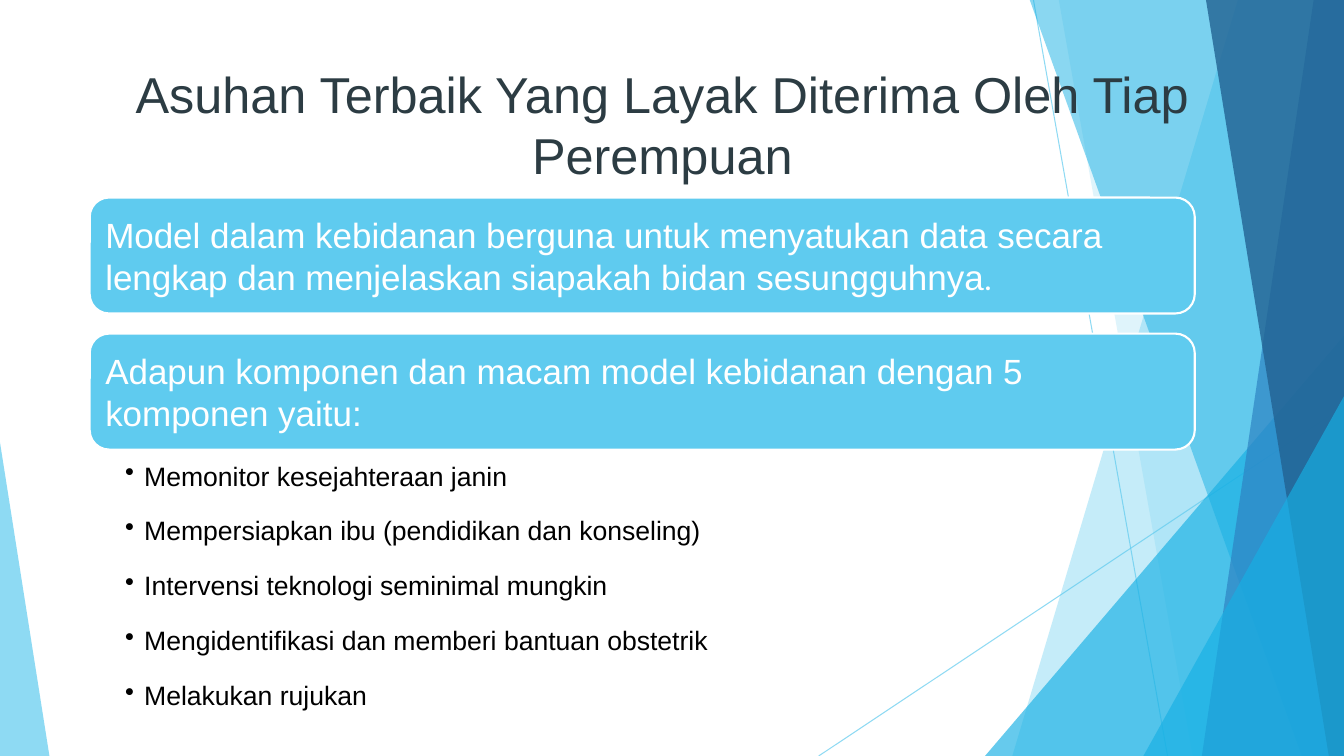
"""Build the slide on the best care every woman deserves."""
from typing import NamedTuple

from lxml import etree
from pptx import Presentation
from pptx import util as u
from pptx.dml.color import RGBColor
from pptx.enum import shapes, text
from pptx.oxml.ns import qn

PX = 9144
WIDTH, HEIGHT = 1333, 750
SKY, CYAN, BLUE, NAVY = "5FCBEF", "17B0E4", "2E83C3", "226292"
WHITE, BLACK, SLATE = "FFFFFF", "000000", "2C3C43"


class Box(NamedTuple):
    left: int
    top: int
    width: int
    height: int


class Ray(NamedTuple):
    start: tuple[int, int]
    end: tuple[int, int]


class Band(NamedTuple):
    top_left: int
    bottom_left: int
    color: str
    opacity: int


class Wedge(NamedTuple):
    box: Box
    apex: int
    color: str
    opacity: int


class Panel(NamedTuple):
    top: int
    words: str
    ending: str = ""


RAYS = [Ray((1025, 0), (1158, HEIGHT)), Ray((WIDTH, 403), (812, HEIGHT))]
BACKDROP = [
    Band(1228, 1004, SKY, 36),
    Band(1050, 1183, SKY, 20),
    Wedge(Box(977, 333, 356, 417), 1, CYAN, 66),
    Band(1021, 1291, CYAN, 50),
    Band(1303, 1192, BLUE, 70),
    Band(1196, 1318, NAVY, 80),
    Wedge(Box(1134, 393, 199, 357), 1, CYAN, 66),
    Wedge(Box(0, 439, 49, 311), 0, SKY, 70),
]
TITLE = "Asuhan Terbaik Yang Layak Diterima Oleh Tiap Perempuan"
PANELS = [
    Panel(196, "Model dalam kebidanan berguna untuk menyatukan data secara lengkap "
               "dan menjelaskan siapakah bidan sesungguhnya", "."),
    Panel(331, "Adapun komponen dan macam model kebidanan dengan 5 komponen yaitu:"),
]
COMPONENTS = [
    "Memonitor kesejahteraan janin",
    "Mempersiapkan ibu (pendidikan dan konseling)",
    "Intervensi teknologi seminimal mungkin",
    "Mengidentifikasi dan memberi bantuan obstetrik",
    "Melakukan rujukan",
]


def px(value: int) -> u.Emu:
    """Turn px into EMU."""
    return u.Emu(value * PX)


def rgb(color: str) -> RGBColor:
    """Turn a hex string into a colour."""
    return RGBColor.from_string(color)


def set_opacity(element, percent: int) -> None:
    """Make the first solid colour inside an element translucent."""
    color = next(element.iter(qn("a:srgbClr")))
    etree.SubElement(color, qn("a:alpha"), val=str(percent * 1000))


def fill_shape(shape, color: str) -> None:
    """Give a shape a flat fill without line or shadow."""
    shape.shadow.inherit = False
    shape.fill.solid()
    shape.fill.fore_color.rgb = rgb(color)
    shape.line.fill.background()


def style_run(run, size: int, color: str, font: str = "Arial") -> None:
    """Set the font of a run."""
    run.font.size = u.Pt(size)
    run.font.name = font
    run.font.color.rgb = rgb(color)


def set_frame(frame, anchor, left: int, top: int, right: int) -> None:
    """Wrap and anchor a text frame and set its insets."""
    frame.word_wrap = True
    frame.vertical_anchor = anchor
    frame.margin_left, frame.margin_right = px(left), px(right)
    frame.margin_top = frame.margin_bottom = px(top)


def draw_ray(slide, ray: Ray) -> None:
    """Draw a thin translucent line."""
    line = slide.shapes.add_connector(
        shapes.MSO_CONNECTOR.STRAIGHT, *map(px, ray.start + ray.end))
    line.line.color.rgb = rgb(SKY)
    line.line.width = u.Pt(0.75)
    properties = line._element.spPr
    set_opacity(properties, 70)
    etree.SubElement(properties, qn("a:effectLst"))


def draw_backdrop(slide, part: Band | Wedge) -> None:
    """Draw a translucent band or wedge."""
    if isinstance(part, Band):
        builder = slide.shapes.build_freeform(part.top_left, -1, scale=PX)
        builder.add_line_segments(
            [(WIDTH, -1), (WIDTH, HEIGHT), (part.bottom_left, HEIGHT)], close=True)
        shape = builder.convert_to_shape()
    else:
        shape = slide.shapes.add_shape(
            shapes.MSO_SHAPE.ISOSCELES_TRIANGLE, *map(px, part.box))
        shape.adjustments[0] = part.apex
    fill_shape(shape, part.color)
    set_opacity(shape._element.spPr, part.opacity)


def draw_title(slide) -> None:
    """Write the centred title."""
    frame = slide.shapes.add_textbox(*map(px, Box(109, 51, 1096, 144))).text_frame
    set_frame(frame, text.MSO_ANCHOR.MIDDLE, 10, 5, 10)
    frame.text = TITLE
    paragraph = frame.paragraphs[0]
    paragraph.alignment = text.PP_ALIGN.CENTER
    style_run(paragraph.runs[0], 36, SLATE)


def draw_panel(slide, panel: Panel) -> None:
    """Draw a rounded panel with its statement."""
    shape = slide.shapes.add_shape(
        shapes.MSO_SHAPE.ROUNDED_RECTANGLE, *map(px, Box(89, panel.top, 1096, 115)))
    fill_shape(shape, SKY)
    shape.line.color.rgb = rgb(WHITE)
    shape.line.width = u.Pt(1.5)
    set_frame(shape.text_frame, text.MSO_ANCHOR.MIDDLE, 10, 10, 10)
    shape.text_frame.text = panel.words
    paragraph = shape.text_frame.paragraphs[0]
    paragraph.alignment = text.PP_ALIGN.LEFT
    style_run(paragraph.runs[0], 25, WHITE)
    if panel.ending:
        run = paragraph.add_run()
        run.text = panel.ending
        style_run(run, 25, WHITE, "Roboto")


def draw_components(slide) -> None:
    """Write the bulleted list of components."""
    frame = slide.shapes.add_textbox(*map(px, Box(89, 437, 1096, 273))).text_frame
    set_frame(frame, text.MSO_ANCHOR.TOP, 35, 3, 19)
    frame.text = "\n".join(COMPONENTS)
    for paragraph in frame.paragraphs:
        paragraph.level = 1
        paragraph.line_spacing = 1.5
        paragraph.space_after = u.Pt(5)
        style_run(paragraph.runs[0], 19, BLACK)
        properties = paragraph._p.get_or_add_pPr()
        properties.set("marL", str(px(19)))
        properties.set("indent", str(px(-19)))
        etree.SubElement(properties, qn("a:buChar"), char="•")


def main() -> None:
    """Build and save the presentation."""
    presentation = Presentation()
    presentation.slide_width, presentation.slide_height = px(WIDTH), px(HEIGHT)
    slide = presentation.slides.add_slide(presentation.slide_layouts[6])
    for ray in RAYS:
        draw_ray(slide, ray)
    for part in BACKDROP:
        draw_backdrop(slide, part)
    draw_title(slide)
    for panel in PANELS:
        draw_panel(slide, panel)
    draw_components(slide)
    presentation.save("out.pptx")


if __name__ == "__main__":
    main()
